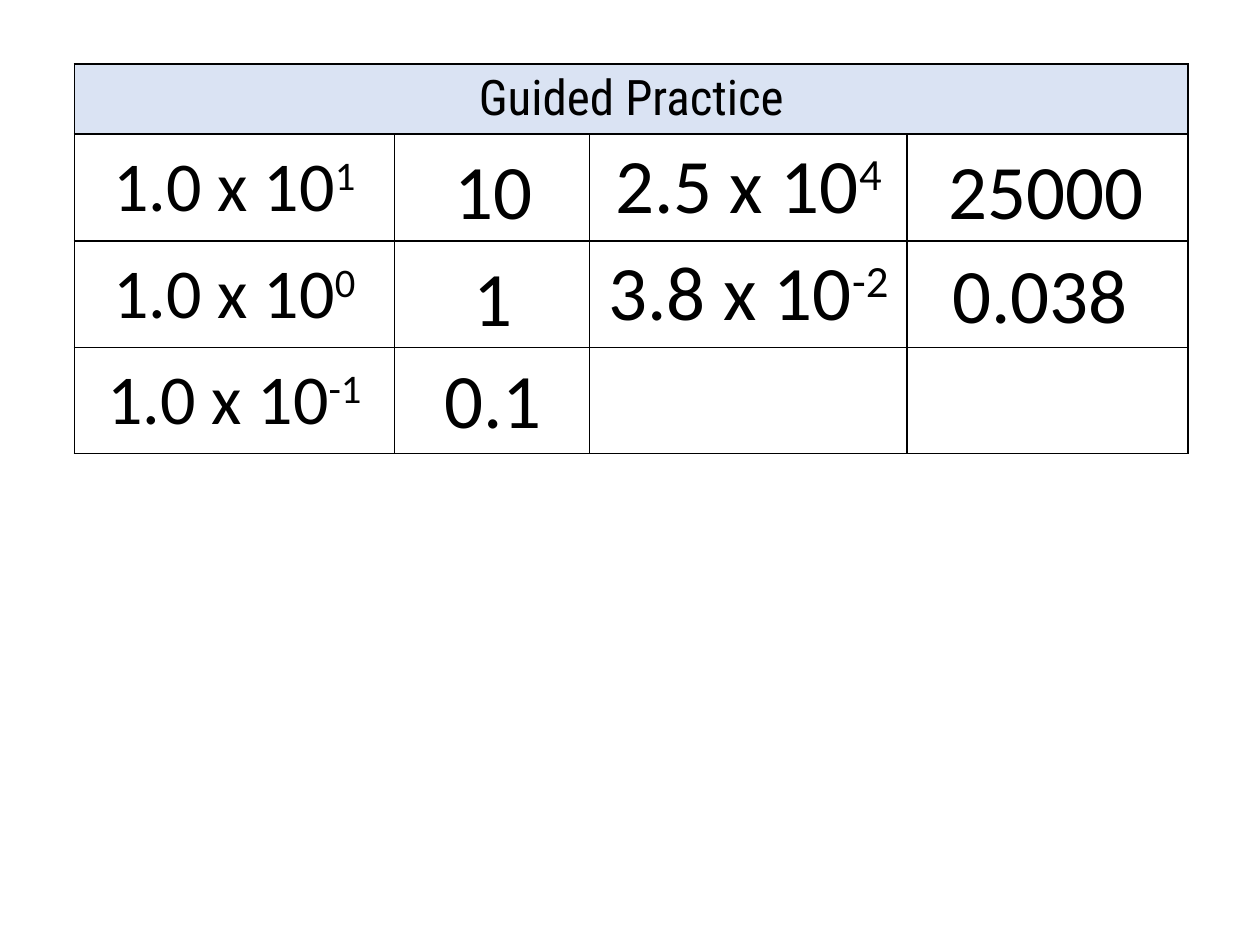
import pptx
import pptx.dml.color
import pptx.enum.text
import pptx.oxml
import pptx.oxml.ns
import pptx.util
from pptx.util import Inches

BLACK = pptx.dml.color.RGBColor(0x00, 0x00, 0x00)
HEADER_BLUE = pptx.dml.color.RGBColor(0xDA, 0xE3, 0xF3)

COLUMN_WIDTHS = [2.54, 1.55, 2.52, 2.23]
ROW_HEIGHTS = [0.55, 0.84, 0.84, 0.84]
POWERS = [
    (1, 0, "1.0 x 10", "1", 40),
    (2, 0, "1.0 x 10", "0", 40),
    (3, 0, "1.0 x 10", "-1", 40),
    (1, 2, "2.5 x 10", "4", 44),
    (2, 2, "3.8 x 10", "-2", 44),
]
ANSWERS = [
    ("10", 3.39, 1.2, 1.05),
    ("1", 3.39, 2.05, 1.05),
    ("0.1", 3.39, 2.86, 1.05),
    ("25000", 7.27, 1.2, 2.07),
    ("0.038", 7.18, 2.02, 2.15),
]


def add_run(p, text, size, font="Calibri", superscript=False):
    p.alignment = pptx.enum.text.PP_ALIGN.CENTER
    r = p.add_run()
    r.text = text
    r.font.size = pptx.util.Pt(size)
    r.font.name = font
    r.font.color.rgb = BLACK
    if superscript:
        r._r.get_or_add_rPr().set("baseline", "30000")


def style_cell(cell):
    cell.vertical_anchor = pptx.enum.text.MSO_ANCHOR.MIDDLE
    tc_pr = cell._tc.get_or_add_tcPr()
    for side in "LRTB":
        tc_pr.append(pptx.oxml.parse_xml(
            f'<a:ln{side} {pptx.oxml.ns.nsdecls("a")} w="12700">'
            f'<a:solidFill><a:srgbClr val="{BLACK}"/></a:solidFill></a:ln{side}>'))
    cell.fill.background()


def add_practice_table(s, left, top, width, height):
    table = s.shapes.add_table(
        len(ROW_HEIGHTS), len(COLUMN_WIDTHS), left, top, width, height).table
    table.first_row = False
    table.horz_banding = False
    for column, column_width in zip(table.columns, COLUMN_WIDTHS):
        column.width = Inches(column_width)
    for row, row_height in zip(table.rows, ROW_HEIGHTS):
        row.height = Inches(row_height)
    for cell in table.iter_cells():
        style_cell(cell)

    header = table.cell(0, 0)
    header.merge(table.cell(0, len(COLUMN_WIDTHS) - 1))
    header.fill.solid()
    header.fill.fore_color.rgb = HEADER_BLUE
    add_run(header.text_frame.paragraphs[0], "Guided Practice", 28, "Roboto Condensed")

    for row, column, base, exponent, size in POWERS:
        p = table.cell(row, column).text_frame.paragraphs[0]
        add_run(p, base, size)
        add_run(p, exponent, size, superscript=True)


def add_answer(s, text, left, top, width, height):
    tf = s.shapes.add_textbox(left, top, width, height).text_frame
    tf.word_wrap = True
    tf.vertical_anchor = pptx.enum.text.MSO_ANCHOR.MIDDLE
    add_run(tf.paragraphs[0], text, 44)


def main():
    prs = pptx.Presentation()
    prs.slide_width = Inches(10)
    prs.slide_height = Inches(7.5)
    s = prs.slides.add_slide(prs.slide_layouts[6])
    add_practice_table(s, Inches(0.59), Inches(0.51),
                       Inches(sum(COLUMN_WIDTHS)), Inches(sum(ROW_HEIGHTS)))
    for text, left, top, width in ANSWERS:
        add_answer(s, text, Inches(left), Inches(top), Inches(width), Inches(0.6))
    prs.save("out.pptx")


if __name__ == "__main__":
    main()
